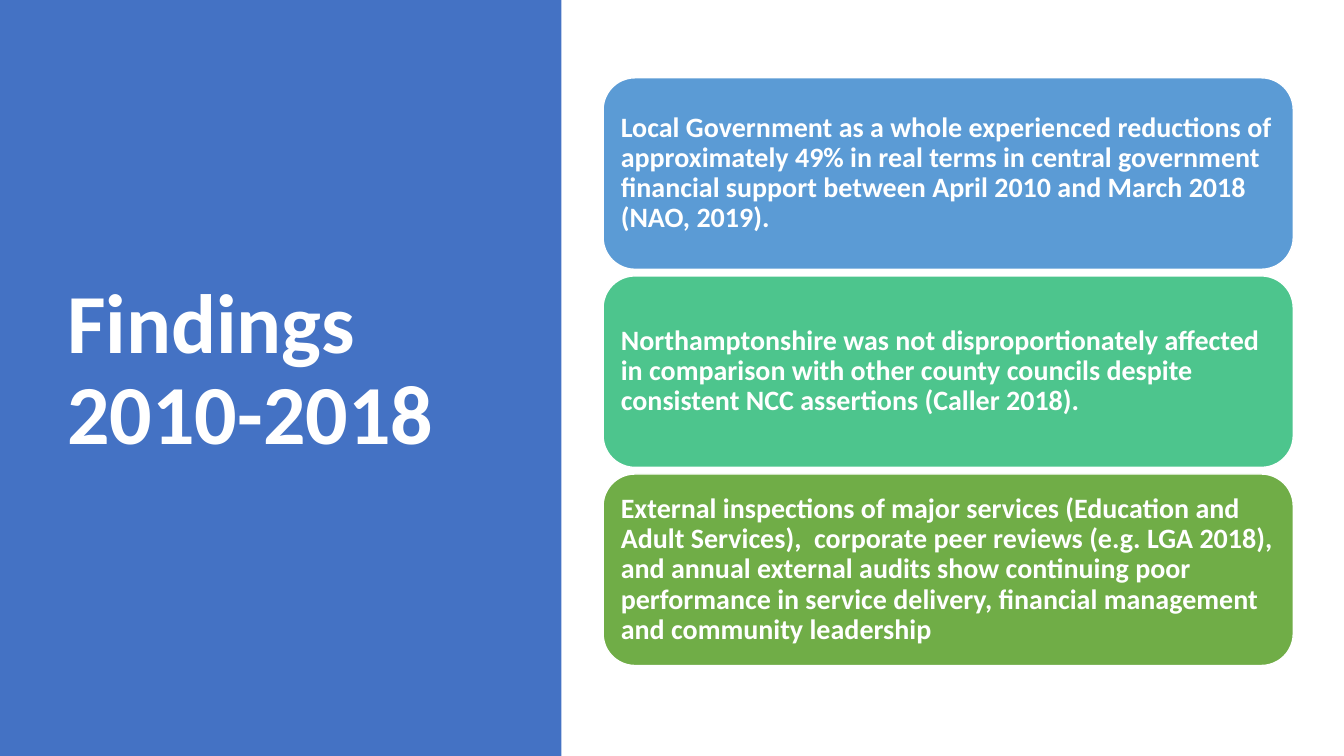
import pptx
import pptx.dml.color
import pptx.enum.shapes
import pptx.enum.text
import pptx.util

Pt = pptx.util.Pt
Shape = pptx.enum.shapes.MSO_SHAPE

FINDINGS = [
    ("5B9BD5", "Local Government as a whole experienced reductions of approximately 49% "
               "in real terms in central government financial support between April 2010 "
               "and March 2018 (NAO, 2019)."),
    ("4DC58D", "Northamptonshire was not disproportionately affected in comparison with "
               "other county councils despite consistent NCC assertions (Caller 2018)."),
    ("70AD47", "External inspections of major services (Education and Adult Services),  "
               "corporate peer reviews (e.g. LGA 2018), and annual external audits show "
               "continuing poor performance in service delivery, financial management "
               "and community leadership"),
]


def color(value):
    return pptx.dml.color.RGBColor.from_string(value)


class SlideBuilder:
    font_name = "Calibri"
    text_color = "FFFFFF"
    line_spacing = 0.9

    def __init__(self, page):
        self.page = page

    def set_text(self, shape, text, size, margins):
        frame = shape.text_frame
        frame.word_wrap = True
        frame.vertical_anchor = pptx.enum.text.MSO_ANCHOR.MIDDLE
        horizontal, vertical = margins
        frame.margin_left = frame.margin_right = Pt(horizontal)
        frame.margin_top = frame.margin_bottom = Pt(vertical)
        para = frame.paragraphs[0]
        para.text = text
        para.alignment = pptx.enum.text.PP_ALIGN.LEFT
        para.line_spacing = self.line_spacing
        para.font.name = self.font_name
        para.font.size = Pt(size)
        para.font.bold = True
        para.font.color.rgb = color(self.text_color)

    def panel(self, kind, left, top, width, height, fill, line=None):
        shape = self.page.shapes.add_shape(kind, Pt(left), Pt(top), Pt(width), Pt(height))
        shape.shadow.inherit = False
        shape.fill.solid()
        shape.fill.fore_color.rgb = color(fill)
        if line:
            shape.line.color.rgb = color(line)
            shape.line.width = Pt(1)
        else:
            shape.line.fill.background()
        return shape

    def title(self, text, left, top, width, height):
        box = self.page.shapes.add_textbox(Pt(left), Pt(top), Pt(width), Pt(height))
        self.set_text(box, text, 60, (7.2, 3.6))

    def card(self, text, left, top, width, height, fill):
        shape = self.panel(Shape.ROUNDED_RECTANGLE, left, top, width, height, fill, "FFFFFF")
        self.set_text(shape, text, 20, (6, 6))


def main():
    deck = pptx.Presentation()
    deck.slide_width = Pt(960)
    deck.slide_height = Pt(540)
    builder = SlideBuilder(deck.slides.add_slide(deck.slide_layouts[6]))

    builder.panel(Shape.RECTANGLE, 0, 0, 401, 540, "4472C4")
    builder.title("Findings 2010-2018", 41, 49, 299.5, 433.5)

    card_top, card_height, card_gap = 55.6, 136.8, 4.7
    for index, (fill, text) in enumerate(FINDINGS):
        top = card_top + index * (card_height + card_gap)
        builder.card(text, 430.8, top, 493, card_height, fill)

    deck.save("out.pptx")


if __name__ == "__main__":
    main()
